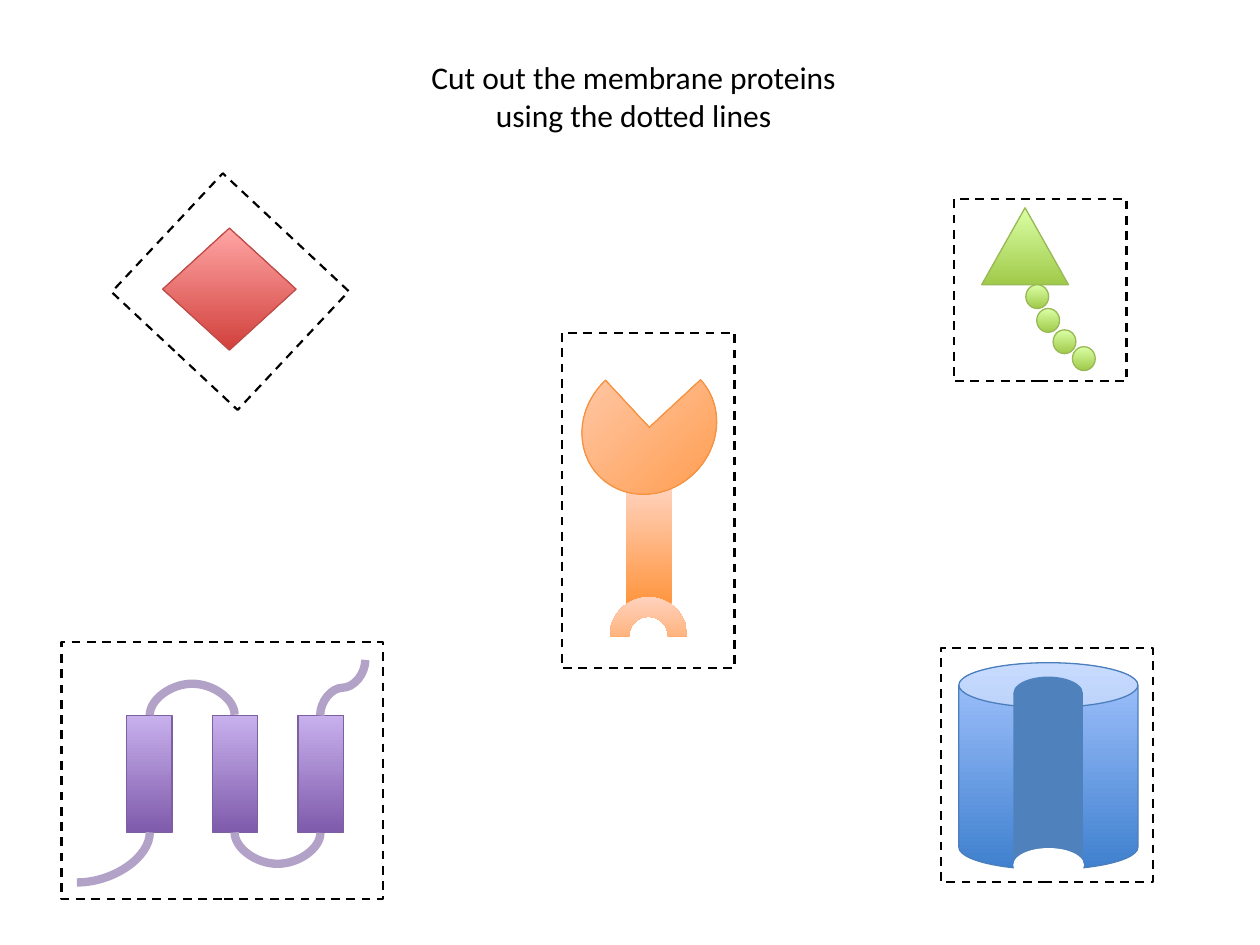
from lxml import etree
from pptx import Presentation
from pptx.dml.color import RGBColor
from pptx.enum.dml import MSO_LINE
from pptx.enum.shapes import MSO_CONNECTOR, MSO_SHAPE
from pptx.enum.text import MSO_AUTO_SIZE, PP_ALIGN
from pptx.oxml.ns import qn
from pptx.util import Cm, Pt

RECT = MSO_SHAPE.RECTANGLE
OVAL = MSO_SHAPE.OVAL
CAN = MSO_SHAPE.CAN
PIE = MSO_SHAPE.PIE
ARCH = MSO_SHAPE.BLOCK_ARC
DIAMOND = MSO_SHAPE.DIAMOND
TRIANGLE = MSO_SHAPE.ISOSCELES_TRIANGLE
CURVE = MSO_CONNECTOR.CURVE
DASH = MSO_LINE.DASH
CENTER = PP_ALIGN.CENTER
FIT_TEXT = MSO_AUTO_SIZE.SHAPE_TO_FIT_TEXT

BLACK = RGBColor(0x00, 0x00, 0x00)
WHITE = RGBColor(0xFF, 0xFF, 0xFF)
CHANNEL_BLUE = RGBColor(0x4F, 0x81, 0xBD)
BLUE_EDGE = RGBColor(0x4B, 0x7E, 0xBC)
PURPLE_EDGE = RGBColor(0x7D, 0x60, 0xA0)
LOOP_PURPLE = RGBColor(0xB3, 0xA2, 0xC7)
ORANGE_EDGE = RGBColor(0xF6, 0x92, 0x40)
RED_EDGE = RGBColor(0xBF, 0x4C, 0x48)
GREEN_EDGE = RGBColor(0x98, 0xB9, 0x55)
BLUES = (RGBColor(0x3F, 0x80, 0xCE), RGBColor(0xA4, 0xC4, 0xFF))
PURPLES = (RGBColor(0x7F, 0x5B, 0xAB), RGBColor(0xC8, 0xB0, 0xED))
ORANGES = (RGBColor(0xFF, 0x95, 0x3E), RGBColor(0xFF, 0xD2, 0xBD))
REDS = (RGBColor(0xD1, 0x40, 0x3C), RGBColor(0xFF, 0xA6, 0xA5))
GREENS = (RGBColor(0xA0, 0xCA, 0x4A), RGBColor(0xDA, 0xFF, 0xA5))


def set_attributes(target, values):
    for name, value in values.items():
        setattr(target, name, value)


def add_part(shapes, kind, box, edge=None, rotation=0):
    part = shapes.add_shape(kind, *map(Cm, box))
    part.shadow.inherit = False
    part.rotation = rotation
    if edge is None:
        part.line.fill.background()
    else:
        part.line.color.rgb = edge
        part.line.width = Pt(0.75)
    return part


def add_solid(shapes, kind, box, color, edge=None):
    part = add_part(shapes, kind, box, edge)
    part.fill.solid()
    part.fill.fore_color.rgb = color


def add_shaded(shapes, kind, box, colors, edge=None, rotation=0):
    part = add_part(shapes, kind, box, edge, rotation)
    part.fill.gradient()
    part.fill.gradient_angle = 90
    for stop, position, color in zip(part.fill.gradient_stops, (0, 1), colors):
        stop.position = position
        stop.color.rgb = color


def add_cut_line(shapes, box, rotation=0):
    outline = add_part(shapes, RECT, box, BLACK, rotation)
    outline.fill.background()
    set_attributes(outline.line, {"width": Pt(1.25), "dash_style": DASH})


def add_loop(shapes, box, rotation, flips="", bend=None):
    left, top, width, height = box
    loop = shapes.add_connector(
        CURVE, Cm(left), Cm(top), Cm(left + width), Cm(top + height))
    loop.line.color.rgb = LOOP_PURPLE
    loop.line.width = Pt(4.75)
    properties = loop._element.spPr
    etree.SubElement(properties, qn("a:effectLst"))
    frame = properties.find(qn("a:xfrm"))
    frame.set("rot", str(rotation * 60000))
    for flip in flips:
        frame.set("flip" + flip, "1")
    geometry = properties.find(qn("a:prstGeom"))
    if bend is None:
        geometry.set("prst", "curvedConnector2")
    else:
        guide = etree.SubElement(geometry.find(qn("a:avLst")), qn("a:gd"))
        guide.set("name", "adj1")
        guide.set("fmla", f"val {round(bend * 100000)}")


def add_channel_protein(shapes):
    add_shaded(shapes, CAN, (19.33, 13.36, 3.61, 4.17), BLUES, BLUE_EDGE)
    add_solid(shapes, OVAL, (20.43, 13.64, 1.4, 0.66), CHANNEL_BLUE)
    add_solid(shapes, RECT, (20.43, 13.97, 1.4, 3.48), CHANNEL_BLUE)
    add_solid(shapes, OVAL, (20.44, 17.11, 1.4, 0.66), WHITE, WHITE)


def add_helix_protein(shapes):
    for index in range(3):
        helix = (2.55 + 1.73 * index, 14.42, 0.92, 2.36)
        add_shaded(shapes, RECT, helix, PURPLES, PURPLE_EDGE)
    add_loop(shapes, (3.87, 13.56, 0.01, 1.71), 90, "HV", 63.5)
    add_loop(shapes, (5.59, 15.92, 0.01, 1.73), 270, "H", 63.5)
    add_loop(shapes, (1.78, 16.55, 1.01, 1.47), 90)
    add_loop(shapes, (6.35, 13.41, 1.12, 0.91), 90, "HV", 0.5)


def add_receptor_protein(shapes):
    add_shaded(shapes, RECT, (12.62, 9.83, 0.92, 2.36), ORANGES)
    add_shaded(shapes, PIE, (11.68, 7.32, 2.82, 2.59), ORANGES, ORANGE_EDGE, 317.1)
    add_shaded(shapes, ARCH, (12.29, 12.04, 1.57, 1.57), ORANGES)


def add_chain_protein(shapes):
    add_shaded(shapes, TRIANGLE, (19.79, 4.19, 1.75, 1.55), GREENS, GREEN_EDGE)
    for left, top in ((20.68, 5.74), (20.9, 6.22), (21.23, 6.65), (21.62, 6.99)):
        add_shaded(shapes, OVAL, (left, top, 0.46, 0.48), GREENS, GREEN_EDGE)


def add_instruction(shapes):
    box = shapes.add_textbox(Cm(7.72), Cm(1.04), Cm(10.11), Cm(1.8))
    set_attributes(box.text_frame, {"word_wrap": True, "auto_size": FIT_TEXT})
    paragraph = box.text_frame.paragraphs[0]
    paragraph.alignment = CENTER
    wording = paragraph.add_run()
    wording.text = "Cut out the membrane proteins using the dotted lines"
    set_attributes(wording.font, {"name": "Calibri", "size": Pt(18)})
    wording.font.color.rgb = BLACK


def main():
    deck = Presentation()
    set_attributes(deck, {"slide_width": Cm(25.4), "slide_height": Cm(19.05)})
    shapes = deck.slides.add_slide(deck.slide_layouts[6]).shapes
    for add_protein in (add_channel_protein, add_helix_protein, add_receptor_protein):
        add_protein(shapes.add_group_shape().shapes)
    add_shaded(shapes, DIAMOND, (3.28, 4.6, 2.69, 2.46), REDS, RED_EDGE)
    add_chain_protein(shapes.add_group_shape().shapes)
    add_cut_line(shapes, (2.9, 4.24, 3.48, 3.28), 43.1)
    for box in (
        (11.33, 6.71, 3.48, 6.76),
        (19.23, 4.01, 3.48, 3.68),
        (18.97, 13.06, 4.27, 4.72),
        (1.24, 12.95, 6.48, 5.18),
    ):
        add_cut_line(shapes, box)
    add_instruction(shapes)
    deck.save("out.pptx")


if __name__ == "__main__":
    main()
